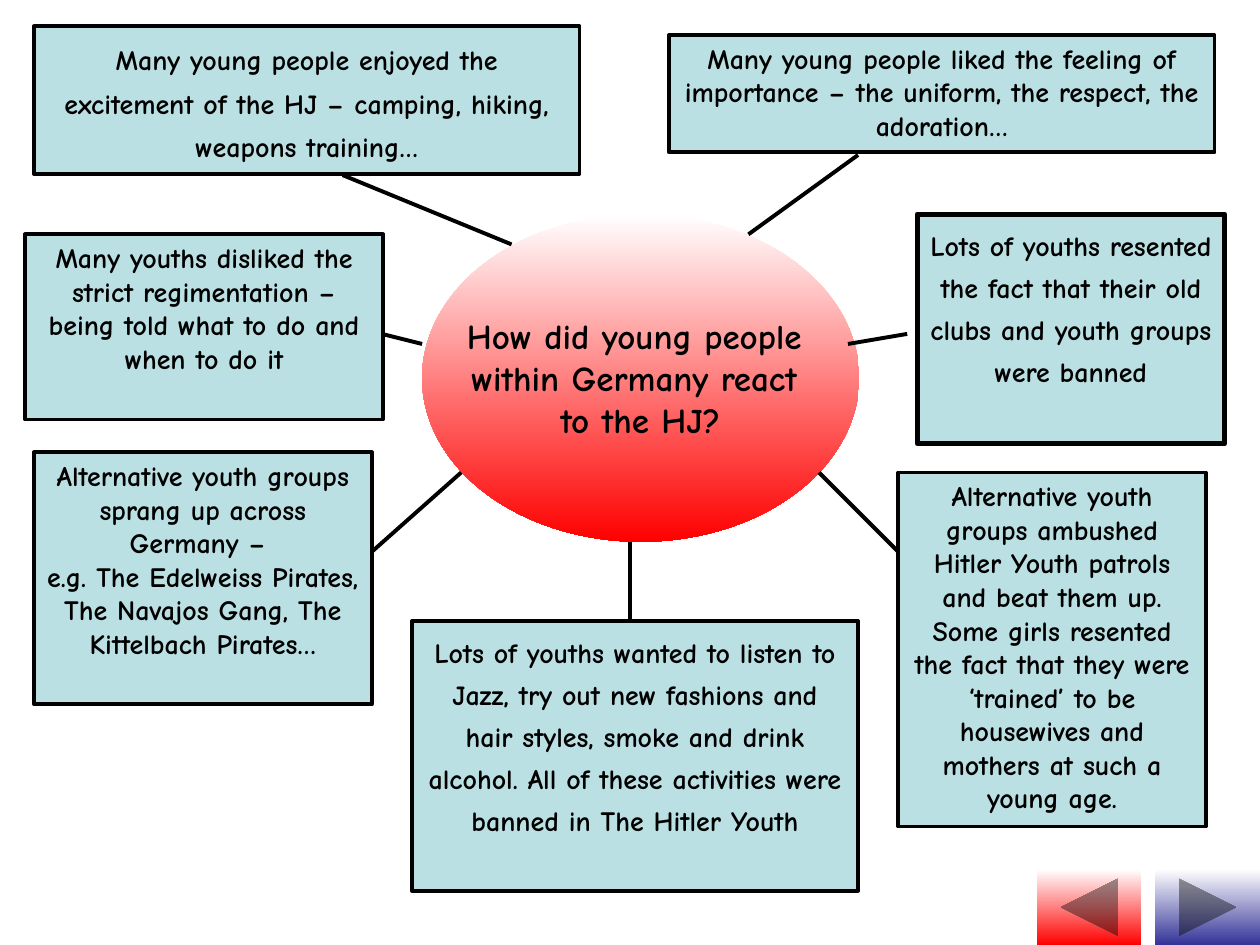
import pptx
import pptx.util
import pptx.dml.color
import pptx.enum.shapes
import pptx.enum.text
import pptx.oxml
import pptx.oxml.ns

COLORS = {"ink": "000000", "box": "BBE0E3", "white": "FFFFFF",
          "red": "FF0000", "blue": "333399"}
FONT = "Comic Neue"
COLUMNS, ROWS = 100, 75
SHAPES = pptx.enum.shapes.MSO_SHAPE
ANCHOR = pptx.enum.text.MSO_ANCHOR


def color(name):
    return pptx.dml.color.RGBColor.from_string(COLORS[name])


class MindMap:
    """Draws on one slide; all lengths are columns and rows of the grid."""

    def __init__(self, presentation):
        self.column = presentation.slide_width / COLUMNS
        self.row = presentation.slide_height / ROWS
        self.slide = presentation.slides.add_slide(presentation.slide_layouts[6])

    def place(self, x, y):
        return round(x * self.column), round(y * self.row)

    def shape(self, kind, left, top, width, height):
        shape = self.slide.shapes.add_shape(
            kind, *self.place(left, top), *self.place(width, height))
        shape.shadow.inherit = False
        return shape

    def label(self, shape, text, size, anchor, spacing=None):
        frame = shape.text_frame
        frame.vertical_anchor = anchor
        paragraph = frame.paragraphs[0]
        paragraph.text = text
        paragraph.alignment = pptx.enum.text.PP_ALIGN.CENTER
        paragraph.line_spacing = spacing
        for run in paragraph.runs:
            run.font.name = FONT
            run.font.size = pptx.util.Pt(size)
            run.font.bold = True
            run.font.color.rgb = color("ink")

    def outline(self, line, width):
        line.color.rgb = color("ink")
        line.width = pptx.util.Pt(width)

    def reaction(self, bounds, text, spacing=None, border=2.25):
        box = self.shape(SHAPES.RECTANGLE, *bounds)
        box.fill.solid()
        box.fill.fore_color.rgb = color("box")
        self.outline(box.line, border)
        self.label(box, text, 16, ANCHOR.TOP, spacing)
        box.text_frame.word_wrap = True
        box.text_frame.auto_size = pptx.enum.text.MSO_AUTO_SIZE.SHAPE_TO_FIT_TEXT

    def fade(self, kind, bounds, end):
        """Add a borderless shape fading from white at the top to the end colour."""
        shape = self.shape(kind, *bounds)
        shape.line.fill.background()
        shape.fill.gradient()
        shape.fill.gradient_angle = 270
        for stop, position, name in zip(shape.fill.gradient_stops, (0, 1), ("white", end)):
            stop.position = position
            stop.color.rgb = color(name)
        return shape

    def question(self, bounds, text):
        ellipse = self.fade(SHAPES.OVAL, bounds, "red")
        self.label(ellipse, text, 20, ANCHOR.MIDDLE)
        ellipse.text_frame.word_wrap = False

    def button(self, left, end, back=False):
        button = self.fade(SHAPES.ACTION_BUTTON_FORWARD_OR_NEXT, (left, 69, 8.3, 6), end)
        if back:
            button._element.spPr.xfrm.set("flipH", "1")

    def spoke(self, start, end):
        connector = self.slide.shapes.add_connector(
            pptx.enum.shapes.MSO_CONNECTOR.STRAIGHT, *self.place(*start), *self.place(*end))
        self.outline(connector.line, 2.25)
        connector._element.spPr.append(
            pptx.oxml.parse_xml(f"<a:effectLst {pptx.oxml.ns.nsdecls('a')}/>"))


REACTIONS = [
    ((53.1, 2.8, 43.3, 9.3), "Many young people liked the feeling of importance – "
     "the uniform, the respect, the adoration…"),
    ((32.7, 49.3, 35.4, 21.4), "Lots of youths wanted to listen to Jazz, try out new "
     "fashions and hair styles, smoke and drink alcohol. All of these activities were "
     "banned in The Hitler Youth", 1.25),
    ((2.7, 2.1, 43.3, 11.7), "Many young people enjoyed the excitement of the HJ – "
     "camping, hiking, weapons training…", 1.3),
    ((2.7, 35.9, 26.8, 20), "Alternative youth groups sprang up across Germany – \n"
     "e.g. The Edelweiss Pirates, The Navajos Gang, The Kittelbach Pirates…"),
    ((2, 18.6, 28.4, 14.7), "Many youths disliked the strict regimentation – "
     "being told what to do and when to do it"),
    ((71.3, 37.5, 24.4, 28.1), "Alternative youth groups ambushed Hitler Youth patrols "
     "and beat them up. Some girls resented the fact that they were ‘trained’ to be "
     "housewives and mothers at such a young age."),
    ((72.8, 17, 24.4, 18.2), "Lots of youths resented the fact that their old clubs "
     "and youth groups were banned", 1.25, 3),
]

SPOKES = [
    ((59.4, 18.6), (68.1, 12.3)),
    ((67.3, 27.3), (72, 26.5)),
    ((65, 37.5), (71.3, 43.8)),
    ((50, 43), (50, 49.3)),
    ((36.6, 37.5), (29.5, 43.8)),
    ((33.5, 27.3), (30.3, 26.5)),
    ((40.6, 19.4), (27.2, 13.9)),
]


def main():
    presentation = pptx.Presentation()
    presentation.slide_width = pptx.util.Inches(10)
    presentation.slide_height = pptx.util.Inches(7.5)
    mind_map = MindMap(presentation)
    for reaction in REACTIONS:
        mind_map.reaction(*reaction)
    mind_map.button(82.3, "red", back=True)
    mind_map.question((33.5, 17, 34.7, 26),
                      "How did young people \nwithin Germany react \nto the HJ?")
    for start, end in SPOKES:
        mind_map.spoke(start, end)
    mind_map.button(91.7, "blue")
    presentation.save("out.pptx")


if __name__ == "__main__":
    main()
